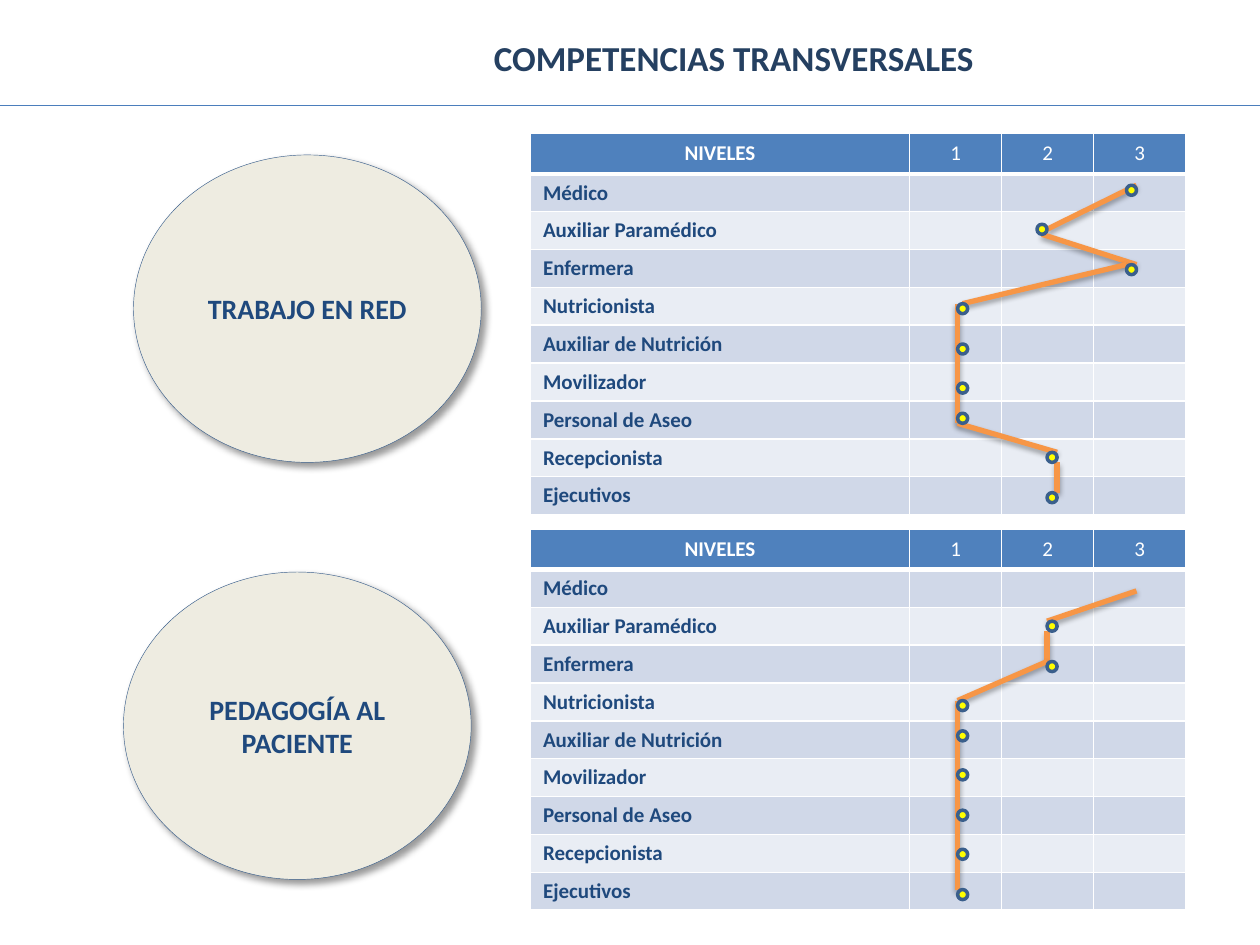
from lxml import etree
from pptx import Presentation
from pptx.dml.color import RGBColor
from pptx.enum.shapes import MSO_CONNECTOR, MSO_SHAPE
from pptx.enum.text import MSO_ANCHOR, PP_ALIGN
from pptx.oxml.ns import qn
from pptx.util import Pt

PX = 9144  # 100 px to the inch
STRAIGHT = MSO_CONNECTOR.STRAIGHT
OVAL = MSO_SHAPE.OVAL
MIDDLE = MSO_ANCHOR.MIDDLE
CENTER, LEFT = PP_ALIGN.CENTER, PP_ALIGN.LEFT

WHITE = RGBColor(0xFF, 0xFF, 0xFF)
NAVY = RGBColor(0x1F, 0x49, 0x7D)
TITLE_NAVY = RGBColor(0x25, 0x40, 0x61)
HEADER_BLUE = RGBColor(0x4F, 0x81, 0xBD)
BANDS = RGBColor(0xD0, 0xD8, 0xE8), RGBColor(0xE9, 0xED, 0xF4)
CREAM = RGBColor(0xEE, 0xEC, 0xE1)
OUTLINE = RGBColor(0x3A, 0x5F, 0x8C)
RULE_BLUE = RGBColor(0x4B, 0x7E, 0xBC)
ORANGE = RGBColor(0xF7, 0x96, 0x46)
YELLOW = RGBColor(0xFF, 0xFF, 0x00)

FONT = "Calibri"
HEADINGS = ["NIVELES", "1", "2", "3"]
ROLES = ["Médico", "Auxiliar Paramédico", "Enfermera", "Nutricionista",
         "Auxiliar de Nutrición", "Movilizador", "Personal de Aseo",
         "Recepcionista", "Ejecutivos"]
COLUMN_WIDTHS = [301, 73, 73, 73]
HEADER_HEIGHT, ROW_HEIGHT = 32, 30
DOT = 8

# Segments and dots are measured from the top left corner of their table.
NETWORK_SEGMENTS = [
    (481, 41, 410, 76), (406, 80, 481, 104), (473, 104, 343, 135),
    (339, 135, 339, 167), (339, 167, 339, 198), (339, 198, 339, 230),
    (339, 230, 418, 253), (418, 261, 418, 285)]
NETWORK_DOTS = [(473, 41), (402, 72), (473, 104), (339, 135), (339, 167),
                (339, 198), (339, 222), (410, 253), (410, 285)]
TEACHING_SEGMENTS = [(481, 49, 410, 73), (410, 81, 410, 105),
                     (410, 105, 339, 136), (339, 136, 339, 286)]
TEACHING_DOTS = [(410, 73), (410, 105), (339, 136), (339, 160), (339, 191),
                 (339, 223), (339, 254), (339, 286)]


def px(*lengths):
    return [length * PX for length in lengths]


def write(frame, text, size, color, bold=True, align=CENTER):
    paragraph = frame.paragraphs[0]
    paragraph.text = text
    paragraph.alignment = align
    font = paragraph.font
    font.name, font.size, font.bold = FONT, Pt(size), bold
    font.color.rgb = color


def set_shadow(shape, blur=0, distance=0, degrees=0, opacity=0):
    """Replace the theme shadow; without opacity there is none."""
    effects = etree.SubElement(shape._element.spPr, qn("a:effectLst"))
    if opacity:
        shadow = etree.SubElement(
            effects, qn("a:outerShdw"), blurRad=str(Pt(blur)),
            dist=str(Pt(distance)), dir=str(degrees * 60000), rotWithShape="0")
        black = etree.SubElement(shadow, qn("a:srgbClr"), val="000000")
        etree.SubElement(black, qn("a:alpha"), val=str(opacity * 1000))


def add_line(slide, ends, color, width, **shadow):
    line = slide.shapes.add_connector(STRAIGHT, *px(*ends))
    line.line.color.rgb = color
    line.line.width = Pt(width)
    set_shadow(line, **shadow)


def add_oval(slide, box, fill, outline_width, **shadow):
    oval = slide.shapes.add_shape(OVAL, *px(*box))
    oval.fill.solid()
    oval.fill.fore_color.rgb = fill
    oval.line.color.rgb = OUTLINE
    oval.line.width = Pt(outline_width)
    set_shadow(oval, **shadow)
    return oval


def add_title(slide, box):
    title = slide.shapes.add_textbox(*px(*box))
    title.text_frame.word_wrap = True
    write(title.text_frame, "COMPETENCIAS TRANSVERSALES", 20, TITLE_NAVY)


def add_competence(slide, box, name):
    oval = add_oval(slide, box, CREAM, 0.25,
                    blur=4, distance=3, degrees=45, opacity=40)
    oval.text_frame.word_wrap = True
    oval.text_frame.vertical_anchor = MIDDLE
    write(oval.text_frame, name, 16, NAVY)


def style_cell(cell, fill, top, bottom):
    """Give white borders and a fill; top and bottom are widths in points."""
    properties = cell._tc.get_or_add_tcPr()
    for side, width in (("L", 1), ("R", 1), ("T", top), ("B", bottom)):
        border = etree.SubElement(properties, qn(f"a:ln{side}"), w=str(Pt(width)))
        paint = etree.SubElement(border, qn("a:solidFill"))
        etree.SubElement(paint, qn("a:srgbClr"), val=str(WHITE))
    cell.fill.solid()
    cell.fill.fore_color.rgb = fill
    cell.vertical_anchor = MIDDLE


def add_levels_table(slide, left, top):
    row_heights = [HEADER_HEIGHT] + [ROW_HEIGHT] * len(ROLES)
    table = slide.shapes.add_table(
        len(row_heights), len(COLUMN_WIDTHS),
        *px(left, top, sum(COLUMN_WIDTHS), sum(row_heights))).table
    for column, width in zip(table.columns, COLUMN_WIDTHS):
        column.width = width * PX
    for row, height in zip(table.rows, row_heights):
        row.height = height * PX

    for c, heading in enumerate(HEADINGS):
        cell = table.cell(0, c)
        style_cell(cell, HEADER_BLUE, 1, 3)
        write(cell.text_frame, heading, 12, WHITE, bold=c == 0)
    for r, role in enumerate(ROLES, start=1):
        for c in range(len(HEADINGS)):
            cell = table.cell(r, c)
            style_cell(cell, BANDS[(r - 1) % 2], 3 if r == 1 else 1, 1)
            if c == 0:
                write(cell.text_frame, role, 12, NAVY, align=LEFT)
            else:  # an empty cell takes its height from the end mark
                etree.SubElement(cell.text_frame.paragraphs[0]._p,
                                 qn("a:endParaRPr"), sz="1200")


def add_profile(slide, left, top, segments, dots):
    """Draw the levels table with the line that joins the level of each role."""
    add_levels_table(slide, left, top)
    for x1, y1, x2, y2 in segments:
        add_line(slide, (left + x1, top + y1, left + x2, top + y2), ORANGE, 3,
                 blur=3.1, distance=1.8, degrees=90, opacity=35)
    for x, y in dots:
        add_oval(slide, (left + x, top + y, DOT, DOT), YELLOW, 2)


def main():
    deck = Presentation()
    deck.slide_width, deck.slide_height = px(1000, 750)
    slide = deck.slides.add_slide(deck.slide_layouts[6])
    add_title(slide, (311, 24, 543, 44))
    add_line(slide, (0, 84, 1000, 84), RULE_BLUE, 0.75)
    add_competence(slide, (106, 123, 276, 244), "TRABAJO EN RED")
    add_profile(slide, 421, 106, NETWORK_SEGMENTS, NETWORK_DOTS)
    add_competence(slide, (98, 454, 276, 244), "PEDAGOGÍA AL PACIENTE")
    add_profile(slide, 421, 420, TEACHING_SEGMENTS, TEACHING_DOTS)
    deck.save("out.pptx")


if __name__ == "__main__":
    main()
